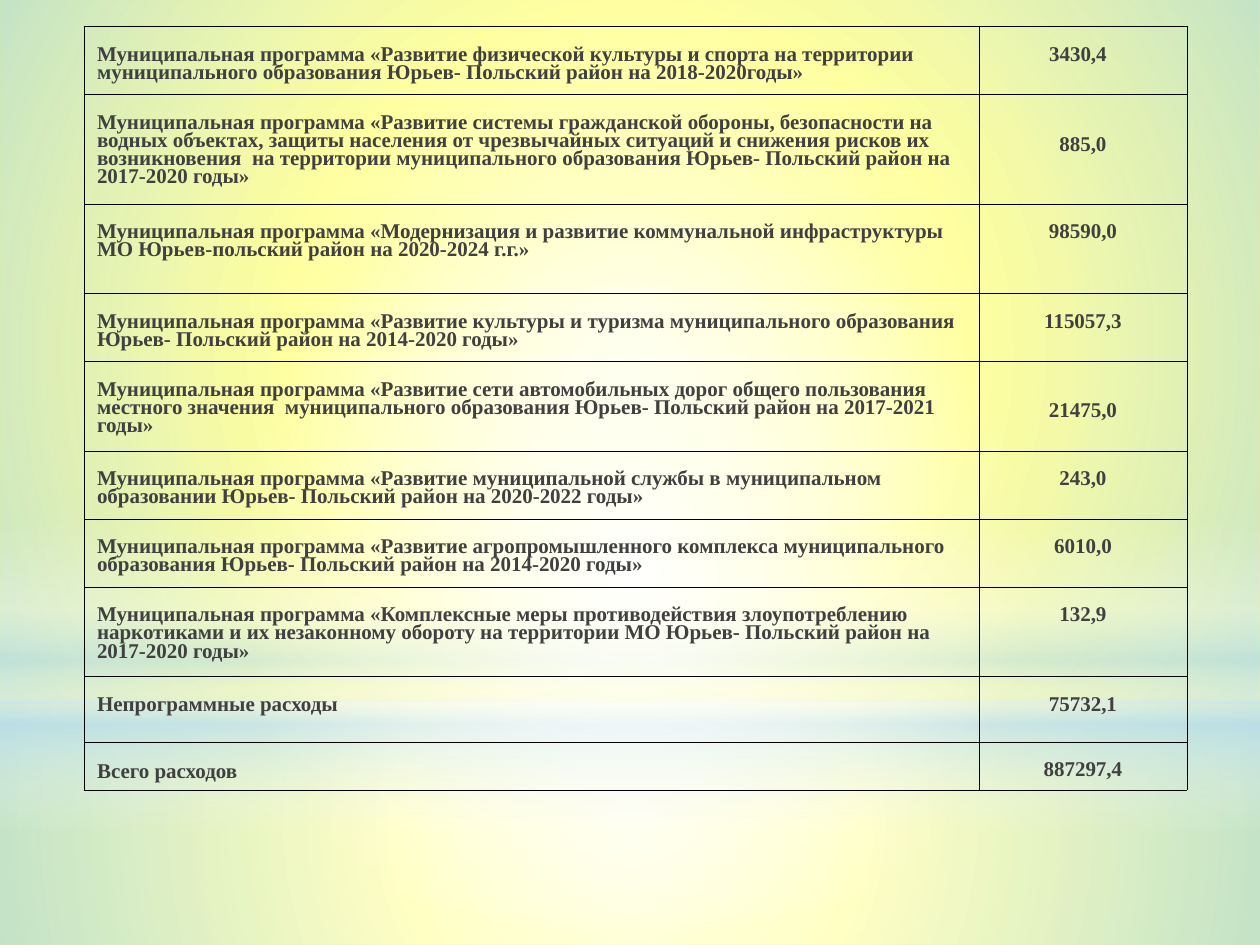
from pptx import Presentation
from pptx.dml.color import RGBColor
from pptx.enum.shapes import MSO_SHAPE
from pptx.enum.text import MSO_ANCHOR, PP_ALIGN
from pptx.oxml import parse_xml
from pptx.oxml.ns import nsdecls, qn
from pptx.util import Inches, Pt

WIDTH, HEIGHT = 10, 7.5
HORIZON = 5.58
FONT = "Times New Roman"
YELLOW, WHITE, SKY, INK, BORDER = "FFFF00", "FFFFFF", "B4DCFA", "404040", "000000"

CIRCLE = ('<a:path path="circle"><a:fillToRect l="50000" t="50000" '
          'r="50000" b="50000"/></a:path>')
DOWNWARD = '<a:lin ang="5400000" scaled="0"/>'

GLOWS = [
    (MSO_SHAPE.RECTANGLE, HORIZON, HEIGHT - HORIZON, CIRCLE,
     [(0, WHITE, 91), (37, WHITE, 76), (100, SKY, 79)]),
    (MSO_SHAPE.RECTANGLE, 0, HORIZON, CIRCLE,
     [(0, WHITE, 89), (48, WHITE, 62), (100, SKY, 79)]),
    (MSO_SHAPE.RECTANGLE, 4.12, 2.5, DOWNWARD,
     [(0, WHITE, 0), (29, WHITE, 30), (45, SKY, 40),
      (55, WHITE, 26), (65, SKY, 60), (100, WHITE, 0)]),
    (MSO_SHAPE.OVAL, 1.75, HORIZON, CIRCLE,
     [(0, WHITE, 100), (56, WHITE, 0)]),
]

PROGRAM = "Муниципальная программа "
EXPENSES = [
    (PROGRAM + "«Развитие физической культуры и спорта на территории "
     "муниципального образования Юрьев- Польский район на 2018-2020годы»", "3430,4", 0.54),
    (PROGRAM + "«Развитие системы гражданской обороны, безопасности на водных объектах, "
     "защиты населения от чрезвычайных ситуаций и снижения рисков их возникновения  на "
     "территории муниципального образования Юрьев- Польский район на 2017-2020 годы»",
     "885,0", 0.87),
    (PROGRAM + "«Модернизация и развитие коммунальной инфраструктуры МО Юрьев-польский "
     "район на 2020-2024 г.г.»", "98590,0", 0.71),
    (PROGRAM + "«Развитие культуры и туризма муниципального образования Юрьев- Польский "
     "район на 2014-2020 годы»", "115057,3", 0.54),
    (PROGRAM + "«Развитие сети автомобильных дорог общего пользования местного значения  "
     "муниципального образования Юрьев- Польский район на 2017-2021 годы»", "21475,0", 0.71),
    (PROGRAM + "«Развитие муниципальной службы в муниципальном образовании Юрьев- Польский "
     "район на 2020-2022 годы»", "243,0", 0.54),
    (PROGRAM + "«Развитие агропромышленного комплекса муниципального образования Юрьев- "
     "Польский район на 2014-2020 годы»", "6010,0", 0.54),
    (PROGRAM + "«Комплексные меры противодействия злоупотреблению наркотиками и их "
     "незаконному обороту на территории МО Юрьев- Польский район на 2017-2020 годы»",
     "132,9", 0.71),
    ("Непрограммные расходы", "75732,1", 0.52),
    ("Всего расходов", "887297,4", 0.38),
]
COLUMNS = [7.1, 1.65]
TOP_INSET, SIDE_INSET = 0.16, 0.1
LOWERED_AMOUNTS = {"885,0": 0.34, "21475,0": 0.33}
RIGHT_INSETS = {"3430,4": 0.18}


def color(hex_value):
    return RGBColor.from_string(hex_value)


def add_glow(slide, outline, top, height, direction, stops):
    glow = slide.shapes.add_shape(
        outline, 0, Inches(top), Inches(WIDTH), Inches(height))
    glow.shadow.inherit = False
    glow.line.fill.background()
    glow.fill.gradient()
    stop_xml = "".join(
        f'<a:gs pos="{position * 1000}"><a:srgbClr val="{tint}">'
        f'<a:alpha val="{opacity * 1000}"/></a:srgbClr></a:gs>'
        for position, tint, opacity in stops)
    gradient = parse_xml(
        f'<a:gradFill {nsdecls("a")} rotWithShape="1">'
        f'<a:gsLst>{stop_xml}</a:gsLst>{direction}</a:gradFill>')
    properties = glow._element.spPr
    properties.replace(properties.find(qn("a:gradFill")), gradient)


def add_borders(cell):
    properties = cell._tc.get_or_add_tcPr()
    for position, side in enumerate(("lnL", "lnR", "lnT", "lnB")):
        properties.insert(position, parse_xml(
            f'<a:{side} {nsdecls("a")} w="{Pt(0.06)}"><a:solidFill>'
            f'<a:srgbClr val="{BORDER}"/></a:solidFill></a:{side}>'))


def fill_cell(cell, text, alignment):
    cell.text = text
    cell.margin_left = Inches(SIDE_INSET)
    cell.margin_right = Inches(RIGHT_INSETS.get(text, SIDE_INSET))
    cell.margin_top = Inches(LOWERED_AMOUNTS.get(text, TOP_INSET))
    cell.margin_bottom = Inches(0.05)
    cell.fill.background()
    add_borders(cell)
    paragraph = cell.text_frame.paragraphs[0]
    paragraph.alignment = alignment
    paragraph.line_spacing = 0.78
    paragraph.font.name = FONT
    paragraph.font.size = Pt(12)
    paragraph.font.bold = True
    paragraph.font.color.rgb = color(INK)


def add_expenses(slide):
    heights = [height for _, _, height in EXPENSES]
    table = slide.shapes.add_table(
        len(EXPENSES), len(COLUMNS), Inches(0.67), Inches(0.21),
        Inches(sum(COLUMNS)), Inches(sum(heights))).table
    table.first_row = False
    table.horz_banding = False
    for column, width in zip(table.columns, COLUMNS):
        column.width = Inches(width)
    for row, (name, amount, height) in zip(table.rows, EXPENSES):
        row.height = Inches(height)
        fill_cell(row.cells[0], name, PP_ALIGN.LEFT)
        fill_cell(row.cells[1], amount, PP_ALIGN.CENTER)
    table.cell(len(EXPENSES) - 1, 0).vertical_anchor = MSO_ANCHOR.MIDDLE


def main():
    deck = Presentation()
    deck.slide_width, deck.slide_height = Inches(WIDTH), Inches(HEIGHT)
    slide = deck.slides.add_slide(deck.slide_layouts[6])
    slide.background.fill.solid()
    slide.background.fill.fore_color.rgb = color(YELLOW)
    for glow in GLOWS:
        add_glow(slide, *glow)
    add_expenses(slide)
    deck.save("out.pptx")


if __name__ == "__main__":
    main()
